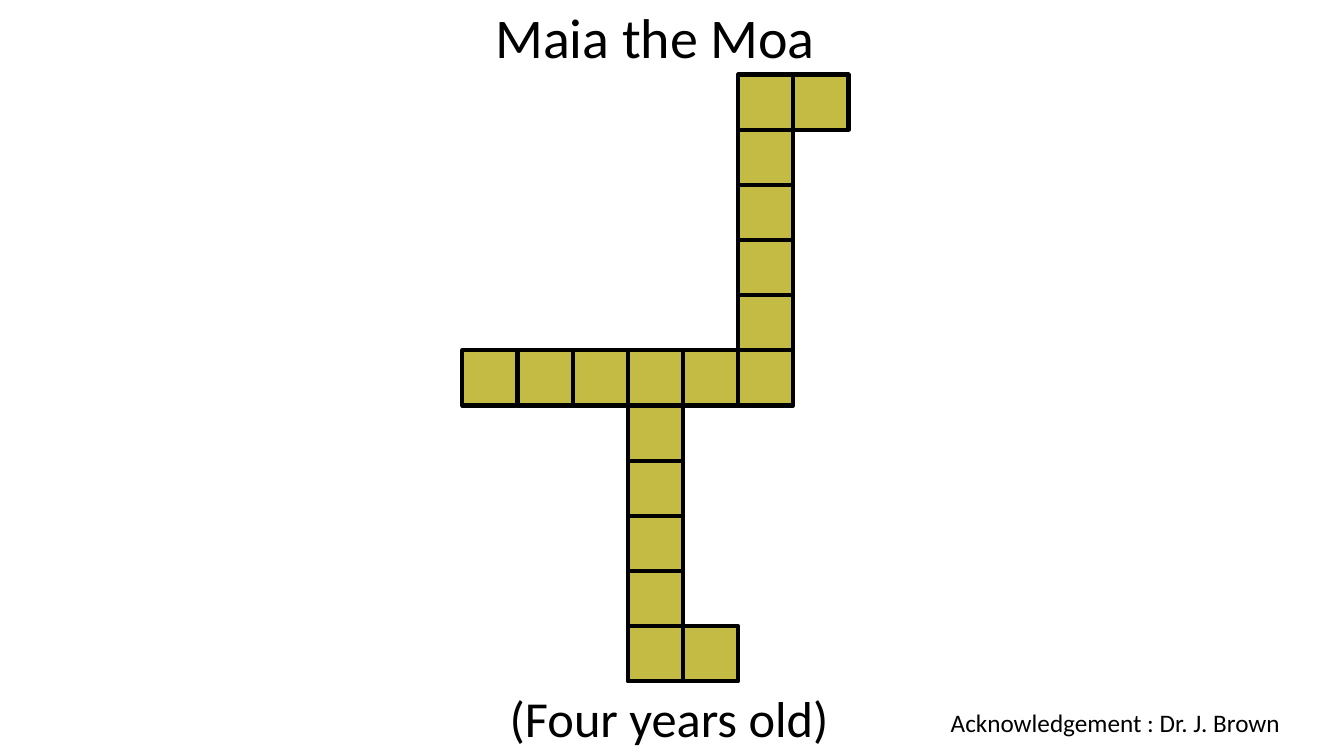
from dataclasses import dataclass

import pptx
import pptx.dml.color
import pptx.enum.shapes
import pptx.enum.text
import pptx.util

Pt = pptx.util.Pt
RGBColor = pptx.dml.color.RGBColor
Align = pptx.enum.text.PP_ALIGN


@dataclass(frozen=True)
class Theme:
    font: str = "Calibri"
    ink: RGBColor = RGBColor(0x00, 0x00, 0x00)
    tile: RGBColor = RGBColor(0xC4, 0xBB, 0x44)
    title_size: float = 40
    age_size: float = 36
    credit_size: float = 18
    outline: float = 3


@dataclass(frozen=True)
class Label:
    text: str
    left: float
    top: float
    width: float
    height: float
    size: float
    align: Align = Align.LEFT


@dataclass(frozen=True)
class Strip:
    """A straight run of tiles, placed by grid column and row."""
    column: int
    row: int
    columns: int = 1
    rows: int = 1


THEME = Theme()
TILE = 39.4
GRID_LEFT, GRID_TOP = 330.3, 53.3

TITLE = Label("Maia the Moa", 260, -1.5, 416, 78, THEME.title_size, Align.CENTER)
CAPTIONS = [
    Label("Acknowledgement : Dr. J. Brown", 672, 502, 274, 29, THEME.credit_size),
    Label("(Four years old)", 357, 487.5, 306, 51, THEME.age_size),
]
MOA = [
    Strip(column=0, row=5, columns=6),  # body
    Strip(column=5, row=0, rows=5),  # neck
    Strip(column=3, row=6, rows=5),  # leg
    Strip(column=6, row=0),  # beak
    Strip(column=4, row=10),  # foot
]


def fill_label(box, label: Label) -> None:
    box.left, box.top = Pt(label.left), Pt(label.top)
    box.width, box.height = Pt(label.width), Pt(label.height)
    frame = box.text_frame
    frame.text = label.text
    frame.word_wrap = True
    frame.auto_size = pptx.enum.text.MSO_AUTO_SIZE.NONE
    frame.vertical_anchor = pptx.enum.text.MSO_ANCHOR.TOP
    para = frame.paragraphs[0]
    para.alignment = label.align
    para.font.name = THEME.font
    para.font.size = Pt(label.size)
    para.font.color.rgb = THEME.ink


def draw_tile(page, column: int, row: int) -> None:
    tile = page.shapes.add_shape(
        pptx.enum.shapes.MSO_SHAPE.RECTANGLE,
        Pt(GRID_LEFT + column * TILE), Pt(GRID_TOP + row * TILE), Pt(TILE), Pt(TILE))
    tile.shadow.inherit = False
    tile.fill.solid()
    tile.fill.fore_color.rgb = THEME.tile
    tile.line.color.rgb = THEME.ink
    tile.line.width = Pt(THEME.outline)


def draw_strip(page, strip: Strip) -> None:
    for row in range(strip.row, strip.row + strip.rows):
        for column in range(strip.column, strip.column + strip.columns):
            draw_tile(page, column, row)


def main() -> None:
    deck = pptx.Presentation()
    deck.slide_width, deck.slide_height = Pt(960), Pt(540)
    page = deck.slides.add_slide(deck.slide_layouts.get_by_name("Title Only"))
    fill_label(page.shapes.title, TITLE)
    for strip in MOA:
        draw_strip(page, strip)
    for caption in CAPTIONS:
        fill_label(page.shapes.add_textbox(0, 0, 0, 0), caption)
    deck.save("out.pptx")


if __name__ == "__main__":
    main()
